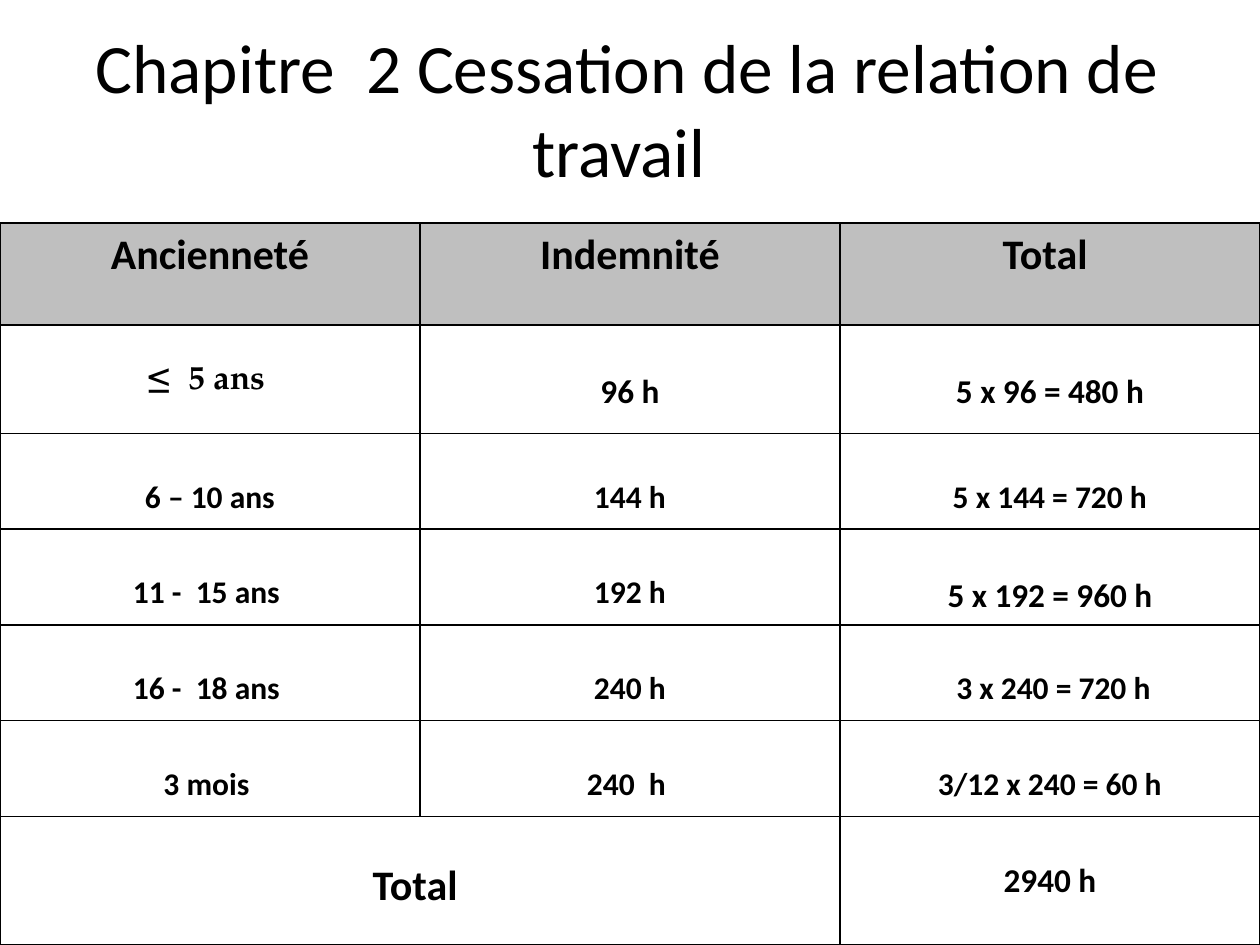
import pptx
import pptx.dml.color
import pptx.enum.text
import pptx.oxml
import pptx.oxml.ns
import pptx.util

BLACK = pptx.dml.color.RGBColor(0x00, 0x00, 0x00)
HEADER_GREY = pptx.dml.color.RGBColor(0xBF, 0xBF, 0xBF)
CENTER = pptx.enum.text.PP_ALIGN.CENTER
BODY_FONT, SERIF_FONT = "Calibri", "TeX Gyre Pagella"
LINE_HEIGHT = {BODY_FONT: 1.22, SERIF_FONT: 1.02}  # in shares of the text size
CELL_INSET = pptx.util.Inches(0.05)

ROWS = [
    ("Ancienneté", "Indemnité", "Total "),
    ("≤  5 ans ", " 96 h ", "5 x 96 = 480 h"),
    (" 6 – 10 ans ", " 144 h ", "5 x 144 = 720 h"),
    ("11 -  15 ans ", "192 h", "5 x 192 = 960 h"),
    ("16 -  18 ans ", " 240 h ", " 3 x 240 = 720 h"),
    ("3 mois ", "240  h ", "3/12 x 240 = 60 h"),
    ("Total ", "", "2940 h"),
]
ROW_HEIGHTS = [0.81, 0.86, 0.76, 0.76, 0.76, 0.76, 1.02]
TEXT_SIZES = {(3, 2): 19, (6, 0): 24, (6, 2): 19}
ROW_SIZES = [24, 19, 18, 18, 18, 18, 18]
LAST = len(ROWS) - 1


def style_run(run, font, size, bold):
    run.font.name = font
    run.font.size = pptx.util.Pt(size)
    run.font.bold = bold
    run.font.color.rgb = BLACK


def add_borders(cell):
    properties = cell._tc.get_or_add_tcPr()
    for position, side in enumerate(("lnL", "lnR", "lnT", "lnB")):
        properties.insert(position, pptx.oxml.parse_xml(
            f'<a:{side} {pptx.oxml.ns.nsdecls("a")} w="12700"><a:solidFill>'
            f'<a:srgbClr val="{BLACK}"/></a:solidFill></a:{side}>'))


presentation = pptx.Presentation()
presentation.slide_width = pptx.util.Inches(10)
presentation.slide_height = pptx.util.Inches(7.5)
slide = presentation.slides.add_slide(presentation.slide_layouts[6])

# Chapter title
chapter = slide.shapes.add_textbox(
    pptx.util.Inches(0.5), pptx.util.Inches(0.3),
    pptx.util.Inches(8.95), pptx.util.Inches(1.11)).text_frame
chapter.word_wrap = True
chapter.vertical_anchor = pptx.enum.text.MSO_ANCHOR.MIDDLE
chapter.text = "Chapitre  2 Cessation de la relation de travail "
chapter.paragraphs[0].alignment = CENTER
style_run(chapter.paragraphs[0].runs[0], BODY_FONT, 39.6, False)

# Severance table across the full slide width
table_height = pptx.util.Inches(sum(ROW_HEIGHTS))
severance = slide.shapes.add_table(
    len(ROWS), 3, 0, presentation.slide_height - table_height,
    presentation.slide_width, table_height).table
severance.first_row = False
severance.horz_banding = False
for row, height in zip(severance.rows, ROW_HEIGHTS):
    row.height = pptx.util.Inches(height)

for r, texts in enumerate(ROWS):
    for c, text in enumerate(texts):
        cell = severance.cell(r, c)
        if r == 0:
            cell.fill.solid()
            cell.fill.fore_color.rgb = HEADER_GREY
        else:
            cell.fill.background()
        add_borders(cell)
        if not text:
            continue
        font = SERIF_FONT if (r, c) == (1, 0) else BODY_FONT
        size = TEXT_SIZES.get((r, c), ROW_SIZES[r])
        # Body text starts one line below the top of its cell
        lead = ROW_SIZES[r] if r == LAST else size
        gap = pptx.util.Pt(lead * LINE_HEIGHT[font]) if r else 0
        cell.margin_top = CELL_INSET + gap
        cell.margin_bottom = CELL_INSET
        cell.text_frame.text = text
        label = cell.text_frame.paragraphs[0]
        label.alignment = CENTER
        style_run(label.runs[0], font, size, True)

# Grand total label spans the first two columns
severance.cell(LAST, 0).merge(severance.cell(LAST, 1))

presentation.save("out.pptx")
